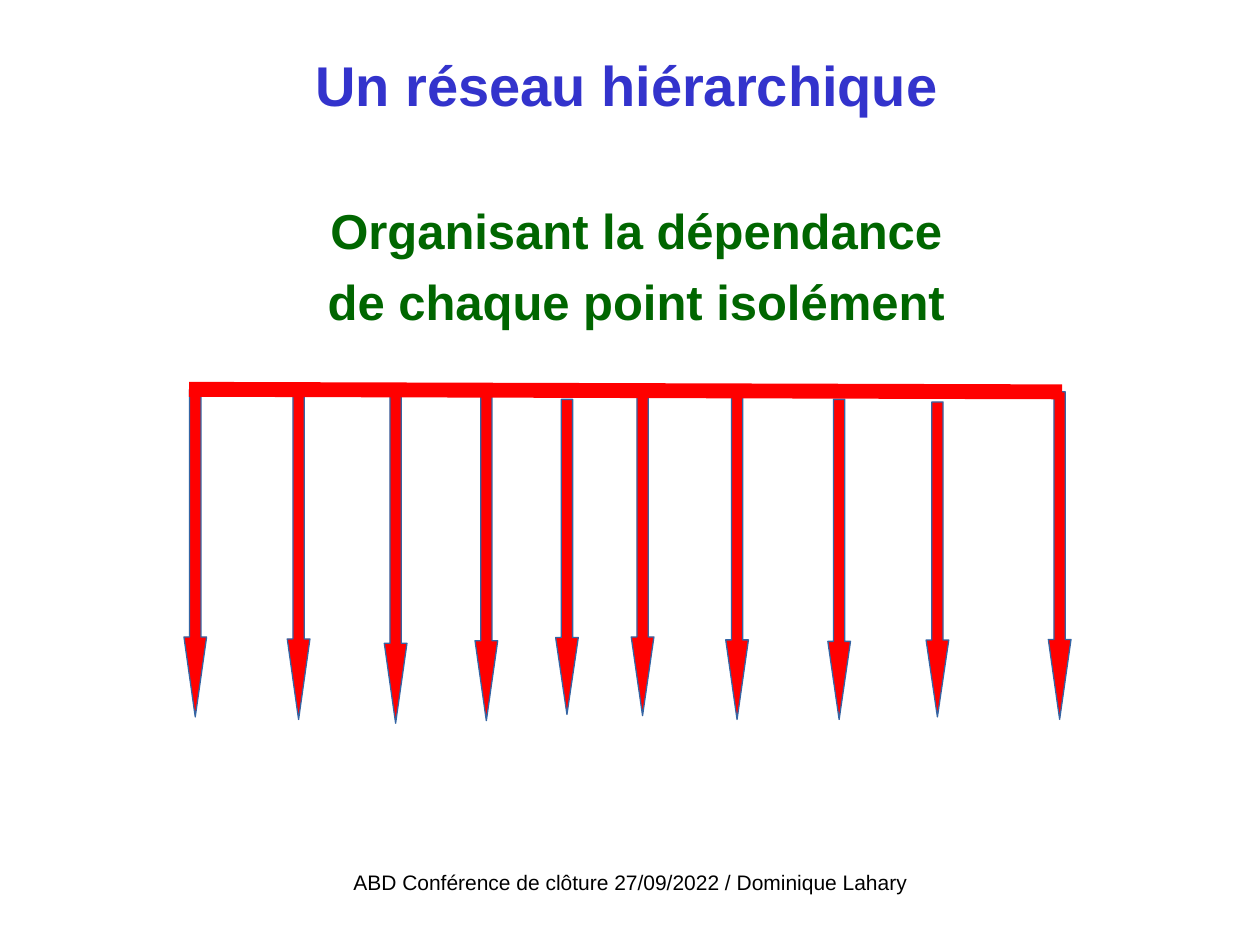
import pptx
import pptx.dml.color
import pptx.enum.shapes
import pptx.enum.text
import pptx.util
from lxml import etree

RGBColor = pptx.dml.color.RGBColor
BLUE = RGBColor(0x33, 0x33, 0xCC)
GREEN = RGBColor(0x00, 0x66, 0x00)
RED = RGBColor(0xFF, 0x00, 0x00)
STEEL = RGBColor(0x34, 0x65, 0xA4)
BLACK = RGBColor(0x00, 0x00, 0x00)

ALIGN = pptx.enum.text.PP_ALIGN
ANCHOR = pptx.enum.text.MSO_ANCHOR
COLS, ROWS = 100, 75

# Column, row and height of each arrow
ARROWS = [
    (44.1, 31.7, 25), (83.2, 31.1, 26), (73.5, 31.9, 25), (65.7, 31.7, 25.4),
    (57.6, 31.2, 25.9), (50.1, 31.2, 25.6), (37.7, 31.2, 26),
    (30.5, 31.4, 26), (22.8, 30.9, 26.2), (14.6, 30.9, 26),
]


def write(frame, text, size=12, color=BLACK, bold=False, gap=0, anchor=ANCHOR.TOP):
    """Fill a text frame, one centred paragraph for each line of text."""
    frame.word_wrap = True
    frame.auto_size = pptx.enum.text.MSO_AUTO_SIZE.NONE
    frame.vertical_anchor = anchor
    frame.margin_left = frame.margin_right = pptx.util.Inches(0.1)
    frame.margin_top = frame.margin_bottom = pptx.util.Inches(0.05)
    for i, line in enumerate(text.split("\n")):
        para = frame.add_paragraph() if i else frame.paragraphs[0]
        para.alignment = ALIGN.CENTER
        para.space_before = pptx.util.Pt(gap if i else 0)
        run = para.add_run()
        run.text = line
        run.font.name = "Arial"
        run.font.size = pptx.util.Pt(size)
        run.font.bold = bold
        run.font.color.rgb = color


class Board:
    """Current slide, measured on a grid of COLS by ROWS."""

    def __init__(self, deck):
        self.deck = deck
        self.slide = deck.slides.add_slide(deck.slide_layouts[5])
        self.shapes = self.slide.shapes

    def grid(self, *spots):
        """Turn alternating columns and rows into slide lengths."""
        units = (self.deck.slide_width / COLS, self.deck.slide_height / ROWS)
        return [round(n * units[i % 2]) for i, n in enumerate(spots)]

    def title(self, spots, text, **style):
        box = self.shapes.title
        box.left, box.top, box.width, box.height = self.grid(*spots)
        write(box.text_frame, text, **style)

    def text(self, spots, text, **style):
        write(self.shapes.add_textbox(*self.grid(*spots)).text_frame, text, **style)

    def arrow(self, col, row, high, wide=1.8, head=6.1 / 25):
        kind = pptx.enum.shapes.MSO_SHAPE.DOWN_ARROW
        item = self.shapes.add_shape(kind, *self.grid(col, row, wide, high))
        item.adjustments[0] = 0.5
        item.adjustments[1] = head * high / wide
        item.shadow.inherit = False
        item.fill.solid()
        item.fill.fore_color.rgb = RED
        item.line.color.rgb = STEEL
        item.line.width = 0

    def bar(self, *spots, width):
        kind = pptx.enum.shapes.MSO_CONNECTOR.STRAIGHT
        item = self.shapes.add_connector(kind, *self.grid(*spots))
        item.line.color.rgb = RED
        item.line.width = pptx.util.Pt(width)
        etree.SubElement(item._element.spPr, pptx.oxml.ns.qn("a:effectLst"))


def main():
    deck = pptx.Presentation()
    deck.slide_width = pptx.util.Inches(10)
    deck.slide_height = pptx.util.Inches(7.5)
    board = Board(deck)
    board.text((3.4, 68.5, 93.3, 5),
               "ABD Conférence de clôture 27/09/2022 / Dominique Lahary")
    board.title((3.5, 0, 92.5, 13.3), "Un réseau hiérarchique",
                size=32, color=BLUE, bold=True, anchor=ANCHOR.MIDDLE)
    for spot in ARROWS:
        board.arrow(*spot)
    board.bar(15, 30.9, 84.3, 31.1, width=8.5)
    board.text((7.3, 15.4, 86.4, 14.8),
               "Organisant la dépendance\nde chaque point isolément",
               size=28, color=GREEN, bold=True, gap=7)
    deck.save("out.pptx")


if __name__ == "__main__":
    main()
